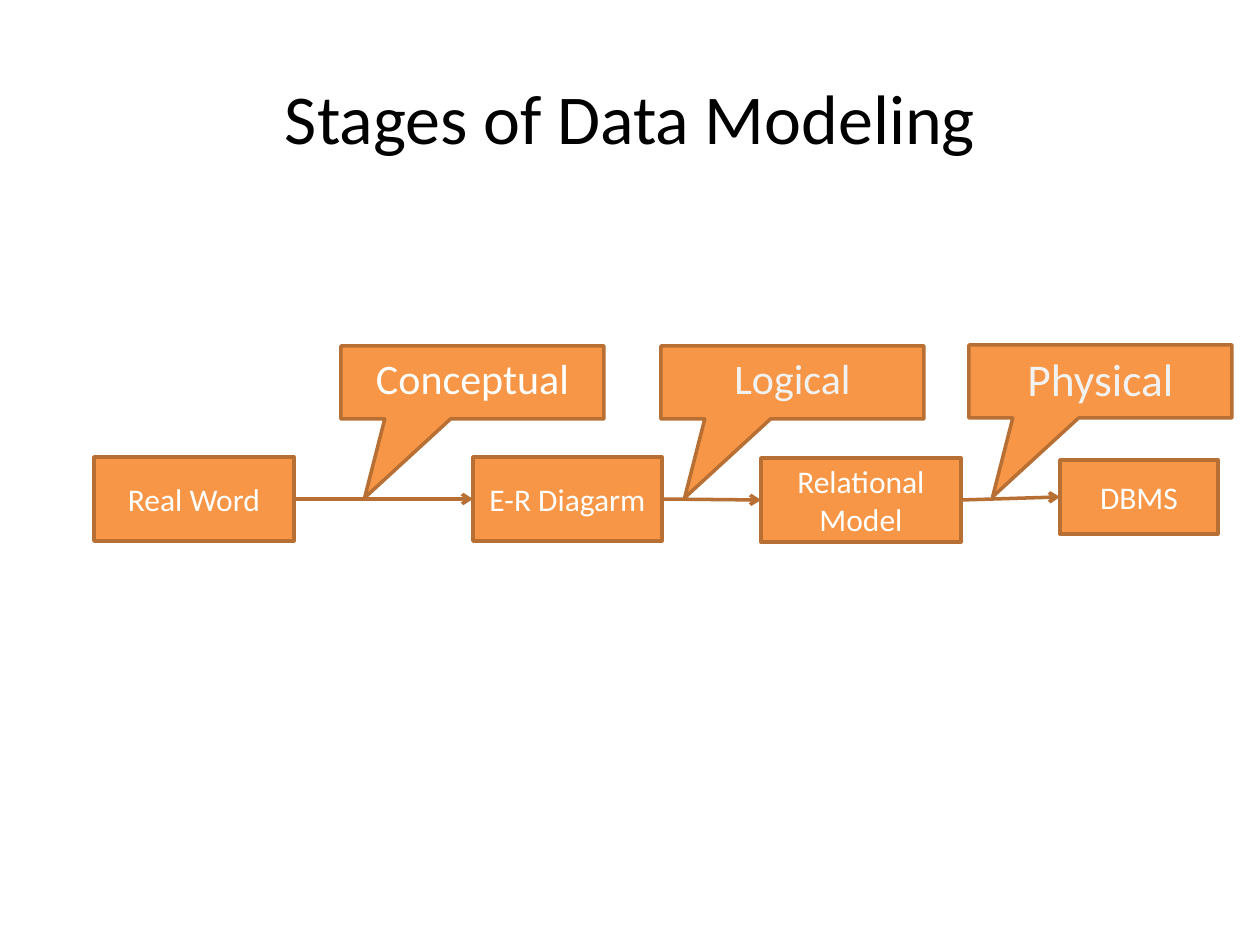
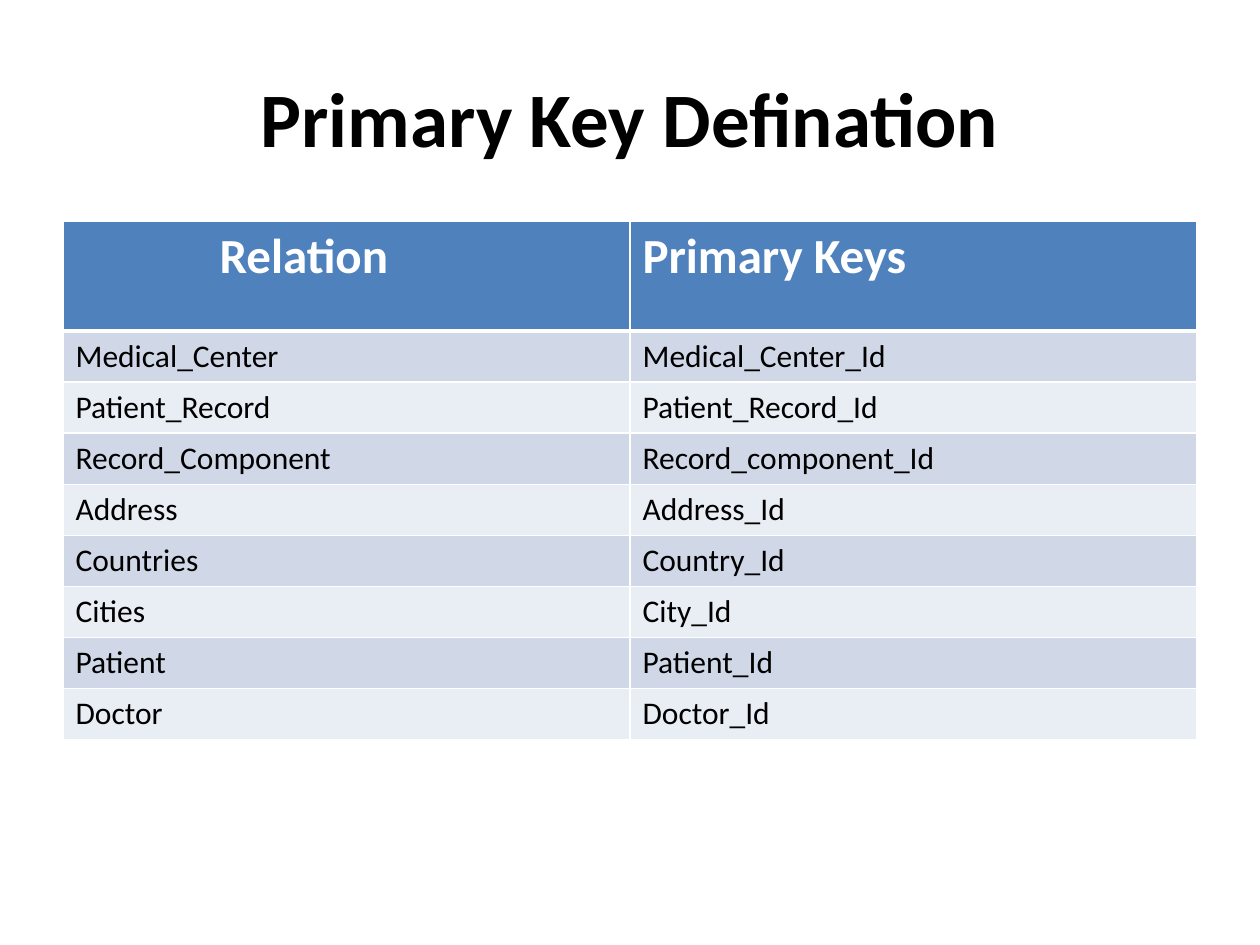
import itertools

import pptx
import pptx.dml.color
import pptx.enum.shapes
import pptx.enum.text
import pptx.oxml.ns
import pptx.util
from lxml import etree

SCALE = pptx.util.Inches(10) / 1260
FONT = "Calibri"
BLACK, WHITE, PALE = "000000", "FFFFFF", "F2F2F2"
ORANGE, BROWN = "F79646", "B76F34"
HEADER_BLUE = "4F81BD"
BANDS = ["D0D8E8", "E9EDF4"]
CENTER = pptx.enum.text.PP_ALIGN.CENTER
LEFT = pptx.enum.text.PP_ALIGN.LEFT
TOP = pptx.enum.text.MSO_ANCHOR.TOP
MIDDLE = pptx.enum.text.MSO_ANCHOR.MIDDLE
SHAPES = pptx.enum.shapes.MSO_SHAPE

BOX_TOP, BOX_HEIGHT = 457, 84
CALLOUT_TOP, CALLOUT_WIDTH, CALLOUT_HEIGHT = 346, 263, 73
HEADER_HEIGHT, ROW_HEIGHT = 110, 51

KEYS = [
    ("Medical_Center", "Medical_Center_Id"),
    ("Patient_Record", "Patient_Record_Id"),
    ("Record_Component", "Record_component_Id"),
    ("Address", "Address_Id"),
    ("Countries", "Country_Id"),
    ("Cities", "City_Id"),
    ("Patient", "Patient_Id"),
    ("Doctor", "Doctor_Id"),
]


def px(length):
    return pptx.util.Emu(round(length * SCALE))


def color(value):
    return pptx.dml.color.RGBColor.from_string(value)


def write(frame, text, size, text_color, bold=False, align=CENTER):
    frame.text = text
    for paragraph in frame.paragraphs:
        paragraph.alignment = align
        paragraph.font.name = FONT
        paragraph.font.size = pptx.util.Pt(size)
        paragraph.font.bold = bold
        paragraph.font.color.rgb = color(text_color)


def add_titled_slide(presentation, text, size, bold=False):
    slide = presentation.slides.add_slide(presentation.slide_layouts[5])
    title = slide.shapes.title
    title.left, title.top, title.width, title.height = map(px, (63, 38, 1134, 158))
    title.text_frame.vertical_anchor = MIDDLE
    write(title.text_frame, text, size, BLACK, bold)
    return slide


def style_line(line):
    line.color.rgb = color(BROWN)
    line.width = pptx.util.Pt(2)


def add_orange_shape(slide, kind, bounds, text, size, text_color, anchor):
    shape = slide.shapes.add_shape(kind, *map(px, bounds))
    shape.shadow.inherit = False
    shape.fill.solid()
    shape.fill.fore_color.rgb = color(ORANGE)
    style_line(shape.line)
    shape.text_frame.word_wrap = True
    shape.text_frame.vertical_anchor = anchor
    write(shape.text_frame, text, size, text_color)
    return shape


def add_box(slide, left, width, text, top=BOX_TOP, height=BOX_HEIGHT):
    bounds = (left, top, width, height)
    return add_orange_shape(slide, SHAPES.RECTANGLE, bounds, text, 18, WHITE, MIDDLE)


def add_callout(slide, left, text, size=24, text_color=PALE, top=CALLOUT_TOP):
    bounds = (left, top, CALLOUT_WIDTH, CALLOUT_HEIGHT)
    callout = add_orange_shape(
        slide, SHAPES.RECTANGULAR_CALLOUT, bounds, text, size, text_color, TOP
    )
    callout.adjustments[0] = -0.41
    callout.adjustments[1] = 1.58


def add_arrow(slide, source, target):
    arrow = slide.shapes.add_connector(
        pptx.enum.shapes.MSO_CONNECTOR.STRAIGHT, 0, 0, 0, 0
    )
    arrow.begin_connect(source, 3)
    arrow.end_connect(target, 1)
    style_line(arrow.line)
    qn = pptx.oxml.ns.qn
    properties = arrow.element.spPr
    etree.SubElement(properties.find(qn("a:ln")), qn("a:tailEnd"), type="arrow")
    etree.SubElement(properties, qn("a:effectLst"))


def add_borders(cell, bottom_points, top_points):
    qn = pptx.oxml.ns.qn
    properties = cell._tc.get_or_add_tcPr()
    widths = {"lnL": 1, "lnR": 1, "lnT": top_points, "lnB": bottom_points}
    for side, points in widths.items():
        border = etree.SubElement(
            properties, qn(f"a:{side}"), w=str(pptx.util.Pt(points))
        )
        fill = etree.SubElement(border, qn("a:solidFill"))
        etree.SubElement(fill, qn("a:srgbClr"), val=WHITE)


def fill_cell(cell, text, fill, size, text_color, bold=False, bottom=1, top=1):
    add_borders(cell, bottom, top)
    cell.fill.solid()
    cell.fill.fore_color.rgb = color(fill)
    write(cell.text_frame, text, size, text_color, bold, LEFT)


def add_key_table(slide):
    height = HEADER_HEIGHT + ROW_HEIGHT * len(KEYS)
    frame = slide.shapes.add_table(
        len(KEYS) + 1, 2, *map(px, (63, 221, 1134, height))
    )
    table = frame.table
    table.horz_banding = False
    for row in table.rows:
        row.height = px(ROW_HEIGHT)
    table.rows[0].height = px(HEADER_HEIGHT)
    for column, text in enumerate(["Relation", "Primary Keys"]):
        fill_cell(table.cell(0, column), text, HEADER_BLUE, 28, WHITE, True, bottom=3)
    relation = table.cell(0, 0)
    relation.margin_right = px(98)
    relation.text_frame.paragraphs[0].alignment = CENTER
    for row, texts in enumerate(KEYS, start=1):
        for column, text in enumerate(texts):
            fill_cell(
                table.cell(row, column), text, BANDS[(row - 1) % 2], 18, BLACK,
                top=3 if row == 1 else 1,
            )


def build_stages(presentation):
    slide = add_titled_slide(presentation, "Stages of Data Modeling", 40)
    add_callout(slide, 341, "Conceptual", text_color=WHITE)
    stages = [
        add_box(slide, 94, 200, "Real Word"),
        add_box(slide, 473, 189, "E-R Diagarm"),
        add_box(slide, 761, 200, "Relational\nModel", top=458),
        add_box(slide, 1060, 158, "DBMS", top=460, height=74),
    ]
    for source, target in itertools.pairwise(stages):
        add_arrow(slide, source, target)
    add_callout(slide, 661, "Logical")
    add_callout(slide, 969, "Physical", size=26, top=345)


def build_primary_keys(presentation):
    slide = add_titled_slide(presentation, "Primary Key Defination", 44, bold=True)
    add_key_table(slide)


def main():
    presentation = pptx.Presentation()
    presentation.slide_width = px(1260)
    presentation.slide_height = px(945)
    build_stages(presentation)
    build_primary_keys(presentation)
    presentation.save("out.pptx")


if __name__ == "__main__":
    main()
